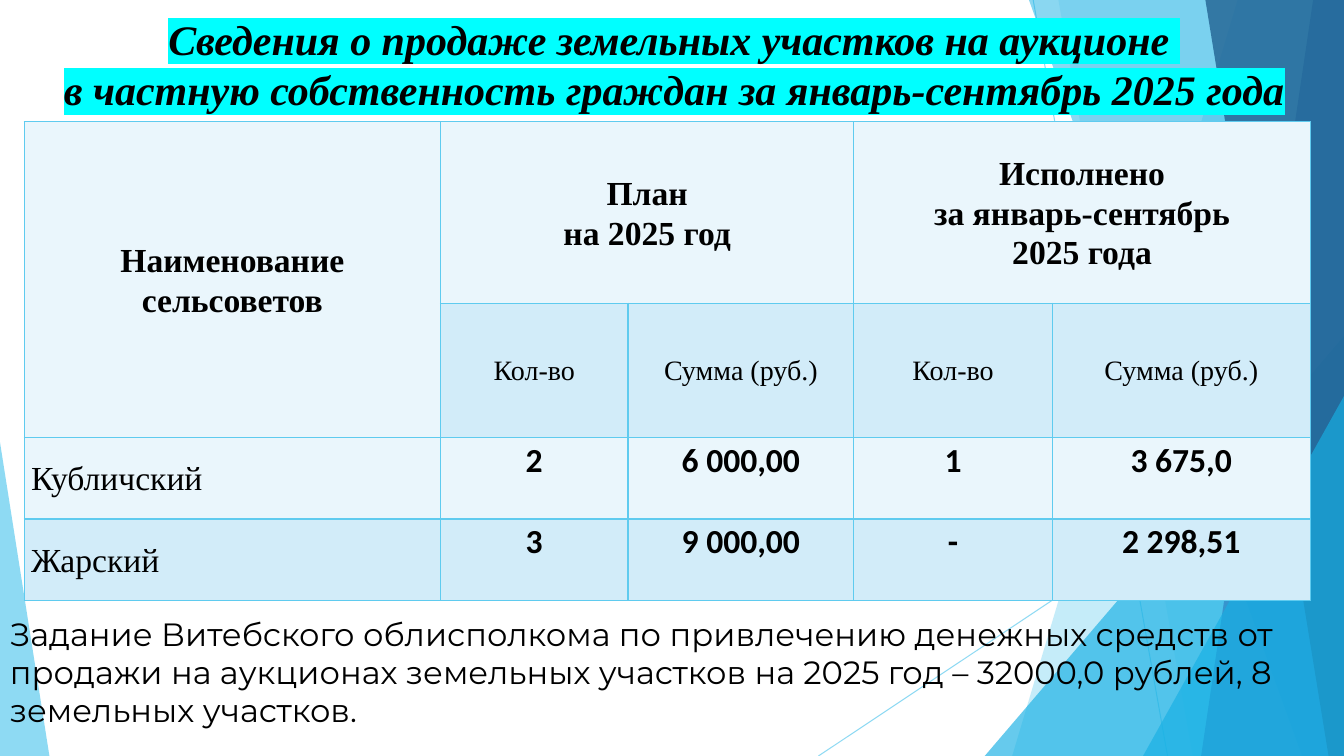
from lxml import etree
from pptx import Presentation, util as u
from pptx.dml import color
from pptx.enum import shapes, text
from pptx.oxml import ns

WIDTH, HEIGHT = 960, 540
SERIF, SANS, ROUND = "Times New Roman", "Calibri", "Montserrat"
BLACK, SKY, AZURE = "000000", "5FCBEF", "17B0E4"
STRIPES = ["EAF6FC", "D2ECF9"]

TITLE = ("Сведения о продаже земельных участков на аукционе \v"
         "в частную собственность граждан за январь-сентябрь 2025 года")
NOTE = ("Задание Витебского облисполкома по привлечению денежных средств от продажи "
        "на аукционах земельных участков на 2025 год – 32000,0 рублей, 8 земельных участков.")

COLUMNS = [297.4, 133.9, 161.3, 141.8, 184.3]
ROWS = [129.6, 95.8, 58.3, 58.3]
CELLS = [
    ["Наименование сельсоветов", "План\nна 2025 год", "",
     "Исполнено\nза январь-сентябрь\n2025 года", ""],
    ["", "Кол-во", "Сумма (руб.)", "Кол-во", "Сумма (руб.)"],
    ["Кубличский", "2", "6 000,00", "1", "3 675,0"],
    ["Жарский", "3", "9 000,00", "-", "2 298,51"],
]
MERGES = [((0, 0), (1, 0)), ((0, 1), (0, 2)), ((0, 3), (0, 4))]

RAYS = [(738, 0, 834, HEIGHT), (WIDTH, 290, 584.6, HEIGHT)]
FACETS = [
    ("band", (884, 723), SKY, 36),
    ("band", (756, 852), SKY, 20),
    ("peak", (703.4, 240, 256.6, 1), AZURE, 66),
    ("band", (735, 930), AZURE, 50),
    ("band", (938, 858), "2E83C3", 70),
    ("band", (861, 949), "226292", 80),
    ("peak", (816.5, 283, 143.5, 1), AZURE, 66),
    ("peak", (0, 316, 35.3, 0), SKY, 70),
]


def paint(fill, hex_colour, alpha=100):
    fill.solid()
    fill.fore_color.rgb = color.RGBColor.from_string(hex_colour)
    if alpha < 100:
        tone = fill._xPr.find(".//" + ns.qn("a:srgbClr"))
        etree.SubElement(tone, ns.qn("a:alpha"), val=str(alpha * 1000))


def style(frame, font, size, bold=False, italic=False, align=None, spacing=None):
    for paragraph in frame.paragraphs:
        paragraph.alignment = align
        paragraph.line_spacing = spacing
        for run in paragraph.runs:
            run.font.name, run.font.size = font, u.Pt(size)
            run.font.bold, run.font.italic = bold, italic
            paint(run.font.fill, BLACK)


def add_ray(slide, x1, y1, x2, y2):
    ray = slide.shapes.add_connector(
        shapes.MSO_CONNECTOR.STRAIGHT, u.Pt(x1), u.Pt(y1), u.Pt(x2), u.Pt(y2))
    ray.line.width = u.Pt(0.75)
    paint(ray.line.fill, SKY, 70)
    etree.SubElement(ray._element.spPr, ns.qn("a:effectLst"))


def add_facet(slide, kind, place, hex_colour, alpha):
    if kind == "band":
        top, foot = place
        outline = slide.shapes.build_freeform(u.Pt(top), 0)
        outline.add_line_segments(
            [(u.Pt(x), u.Pt(y)) for x, y in [(WIDTH, 0), (WIDTH, HEIGHT), (foot, HEIGHT)]])
        facet = outline.convert_to_shape()
    else:
        left, top, width, apex = place
        facet = slide.shapes.add_shape(
            shapes.MSO_SHAPE.ISOSCELES_TRIANGLE,
            u.Pt(left), u.Pt(top), u.Pt(width), u.Pt(HEIGHT - top))
        facet.adjustments[0] = apex
    facet.shadow.inherit = False
    facet.line.fill.background()
    paint(facet.fill, hex_colour, alpha)


def add_words(slide, words, left, top, width, height):
    frame = slide.shapes.add_textbox(
        u.Pt(left), u.Pt(top), u.Pt(width), u.Pt(height)).text_frame
    frame.word_wrap = True
    frame.text = words
    return frame


def add_borders(cell):
    properties = cell._tc.get_or_add_tcPr()
    for position, side in enumerate(["lnL", "lnR", "lnT", "lnB"]):
        border = etree.Element(ns.qn("a:" + side), w=str(u.Pt(1)))
        fill = etree.SubElement(border, ns.qn("a:solidFill"))
        etree.SubElement(fill, ns.qn("a:srgbClr"), val=SKY)
        properties.insert(position, border)


def fill_cell(cell, words, row, column):
    cell.text = words
    cell.margin_left = cell.margin_right = u.Pt(5)
    cell.margin_top = cell.margin_bottom = 0
    is_value = row > 1 and column > 0
    is_name = row > 1 and column == 0
    cell.vertical_anchor = text.MSO_ANCHOR.TOP if is_value else text.MSO_ANCHOR.MIDDLE
    style(cell.text_frame, SANS if is_value else SERIF, 20 if row == 1 else 24,
          bold=row == 0 or is_value,
          align=text.PP_ALIGN.LEFT if is_name else text.PP_ALIGN.CENTER, spacing=1.07)
    paint(cell.fill, STRIPES[row % 2])
    add_borders(cell)


def add_sales(slide):
    sales = slide.shapes.add_table(
        len(ROWS), len(COLUMNS), u.Pt(17.3), u.Pt(87),
        u.Pt(sum(COLUMNS)), u.Pt(sum(ROWS))).table
    for column, width in zip(sales.columns, COLUMNS):
        column.width = u.Pt(width)
    for row, height in zip(sales.rows, ROWS):
        row.height = u.Pt(height)
    for r, line in enumerate(CELLS):
        for c, words in enumerate(line):
            fill_cell(sales.cell(r, c), words, r, c)
    for first, last in MERGES:
        sales.cell(*first).merge(sales.cell(*last))


def main():
    deck = Presentation()
    deck.slide_width, deck.slide_height = u.Pt(WIDTH), u.Pt(HEIGHT)
    slide = deck.slides.add_slide(deck.slide_layouts[6])
    for ray in RAYS:
        add_ray(slide, *ray)
    for facet in FACETS:
        add_facet(slide, *facet)

    title = add_words(slide, TITLE, 32.4, 6, 898.6, 78)
    style(title, SERIF, 30, bold=True, italic=True, align=text.PP_ALIGN.CENTER)
    for run in title.paragraphs[0].runs:
        highlight = etree.Element(ns.qn("a:highlight"))
        etree.SubElement(highlight, ns.qn("a:srgbClr"), val="00FFFF")
        run._r.rPr.find(ns.qn("a:solidFill")).addnext(highlight)

    note = add_words(slide, NOTE, 0, 437, WIDTH, 92)
    style(note, ROUND, 23, spacing=0.98)
    add_sales(slide)
    deck.save("out.pptx")


if __name__ == "__main__":
    main()
